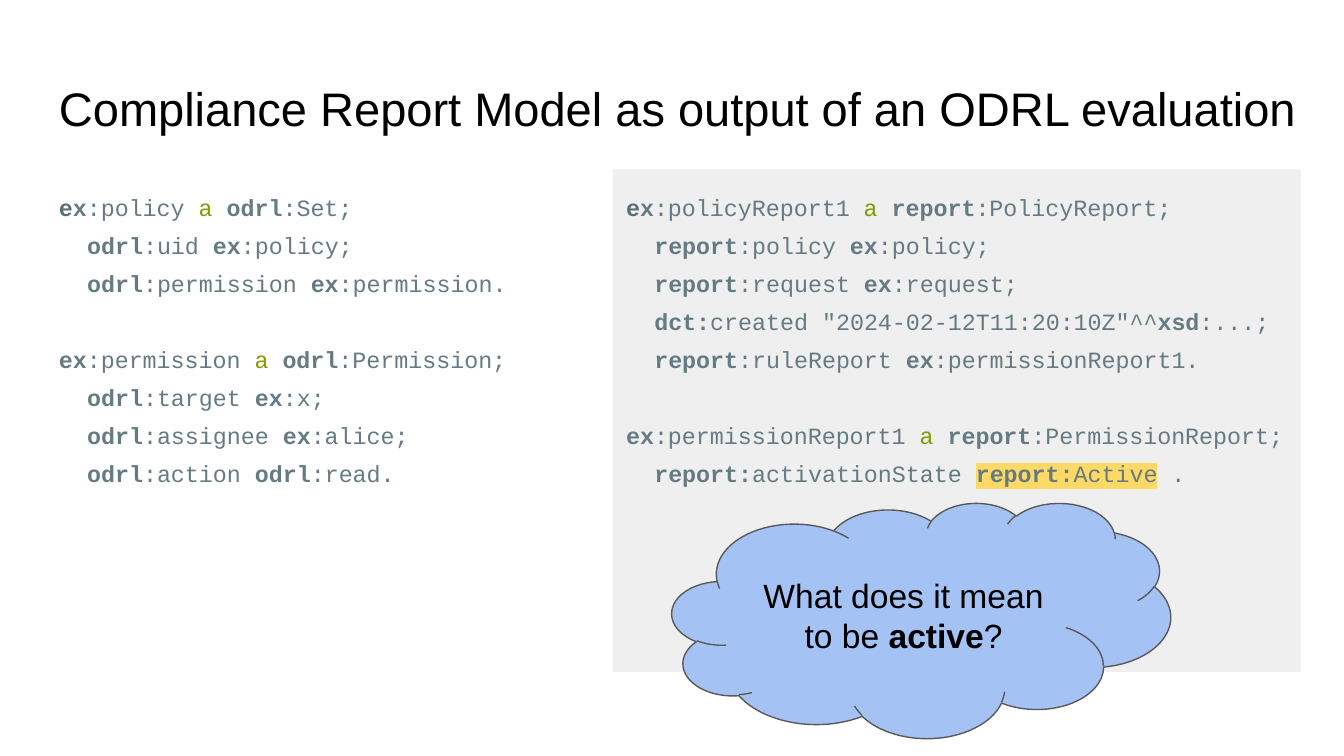
from lxml.etree import SubElement
from pptx import Presentation
from pptx.dml.color import RGBColor
from pptx.enum.shapes import MSO_SHAPE
from pptx.enum.text import MSO_ANCHOR, PP_ALIGN
from pptx.oxml.ns import qn
from pptx.util import Inches, Pt

HUES = {"black": "000000", "code": "657B83", "dark": "586E75",
        "green": "859900", "panel": "EFEFEF", "mark": "FFD966",
        "cloud": "A4C2F4", "edge": "595959"}

TITLE = {"name": "Arial", "size": Pt(25.2)}
CODE = {"name": "Courier New", "size": Pt(12.5)}
CLOUD = {"name": "Arial", "size": Pt(18)}

# Marks that switch a style on and off: * bold, ~ green, _ dark, = highlight
MARKS = "*~_="
INDENT = Inches(0.21)
GAP = Pt(20.3)

POLICY = [
    ["*_e_x*:policy ~a ~*odrl*:Set;",
     "*odrl*:uid *ex*:policy;",
     "*odrl*:permission *ex*:permission."],
    ["*ex*:permission ~a ~*odrl*:Permission;",
     "*odrl*:target *ex*:x;",
     "*odrl*:assignee *ex*:alice;",
     "*odrl*:action *odrl*:read."],
]
REPORT = [
    ["*_e_x*:policyReport1 ~a ~*report*:PolicyReport;",
     "*report*:policy *ex*:policy;",
     "*report*:request *ex*:request;",
     '*dct:*created "2024-02-12T11:20:10Z"^^*xsd*:...;',
     "*report*:ruleReport *ex*:permissionReport1."],
    ["*ex*:permissionReport1 ~a ~*report*:PermissionReport;",
     "*report:*activationState =*report:*Active= ."],
]


def rgb(hue):
    return RGBColor.from_string(HUES[hue])


def split(text):
    """Yield each stretch of text with the set of marks in force."""
    on, part = set(), ""
    for char in text:
        if char in MARKS:
            if part:
                yield part, set(on)
            on ^= {char}
            part = ""
        else:
            part += char
    if part:
        yield part, on


def write(para, text, style, hue):
    for part, on in split(text):
        run = para.add_run()
        run.text = part
        for key, value in {**style, "bold": "*" in on}.items():
            setattr(run.font, key, value)
        tint = "green" if "~" in on else "dark" if "_" in on else hue
        run.font.color.rgb = rgb(tint)
        if "=" in on:
            props = run._r.get_or_add_rPr()
            light = SubElement(props, qn("a:highlight"))
            SubElement(light, qn("a:srgbClr"), val=HUES["mark"])
            props.find(qn("a:solidFill")).addnext(light)


def frame(shape, anchor):
    text = shape.text_frame
    look = {"word_wrap": True, "vertical_anchor": anchor}
    for side in ("left", "top", "right", "bottom"):
        look["margin_" + side] = Inches(0.1)
    for key, value in look.items():
        setattr(text, key, value)
    return text


def place(slide, box, kind=None, fill=None):
    """Add a text box, or a filled shape when a kind is given."""
    size = [Inches(n) for n in box]
    if kind is None:
        return slide.shapes.add_textbox(*size)
    shape = slide.shapes.add_shape(kind, *size)
    shape.shadow.inherit = False
    shape.fill.solid()
    shape.fill.fore_color.rgb = rgb(fill)
    shape.line.fill.background()
    return shape


def add_title(slide, box, words):
    text = frame(place(slide, box), MSO_ANCHOR.TOP)
    write(text.paragraphs[0], words, TITLE, "black")


def add_code(slide, box, blocks, kind=None, fill=None):
    text = frame(place(slide, box, kind, fill), MSO_ANCHOR.TOP)
    para = text.paragraphs[0]
    for b, block in enumerate(blocks):
        for n, line in enumerate(block):
            if b or n:
                para = text.add_paragraph()
            look = {"alignment": PP_ALIGN.LEFT, "line_spacing": 1.36,
                    "space_before": GAP if b and not n else Pt(0)}
            for key, value in look.items():
                setattr(para, key, value)
            # Lines after the subject are indented
            if n:
                para._p.get_or_add_pPr().set("marL", str(INDENT))
            write(para, line, CODE, "code")


def add_cloud(slide, box, words):
    shape = place(slide, box, MSO_SHAPE.CLOUD, "cloud")
    shape.line.color.rgb = rgb("edge")
    shape.line.width = Pt(0.75)
    para = frame(shape, MSO_ANCHOR.MIDDLE).paragraphs[0]
    para.alignment = PP_ALIGN.CENTER
    write(para, words, CLOUD, "black")


def main():
    deck = Presentation()
    # A 16:9 slide
    deck.slide_width = Inches(10)
    deck.slide_height = Inches(10) * 9 // 16
    slide = deck.slides.add_slide(deck.slide_layouts[6])

    # Heading
    add_title(slide, (0.34, 0.49, 9.53, 0.63),
              "Compliance Report Model as output of an ODRL evaluation")
    # Policy on the left, report on a grey panel on the right
    add_code(slide, (0.34, 1.26, 4.06, 3.74), POLICY)
    add_code(slide, (4.56, 1.26, 5.12, 3.74), REPORT,
             MSO_SHAPE.RECTANGLE, "panel")
    # Question
    add_cloud(slide, (5, 3.74, 3.71, 1.75),
              "What does it mean to be *active*?")
    deck.save("out.pptx")


if __name__ == "__main__":
    main()
